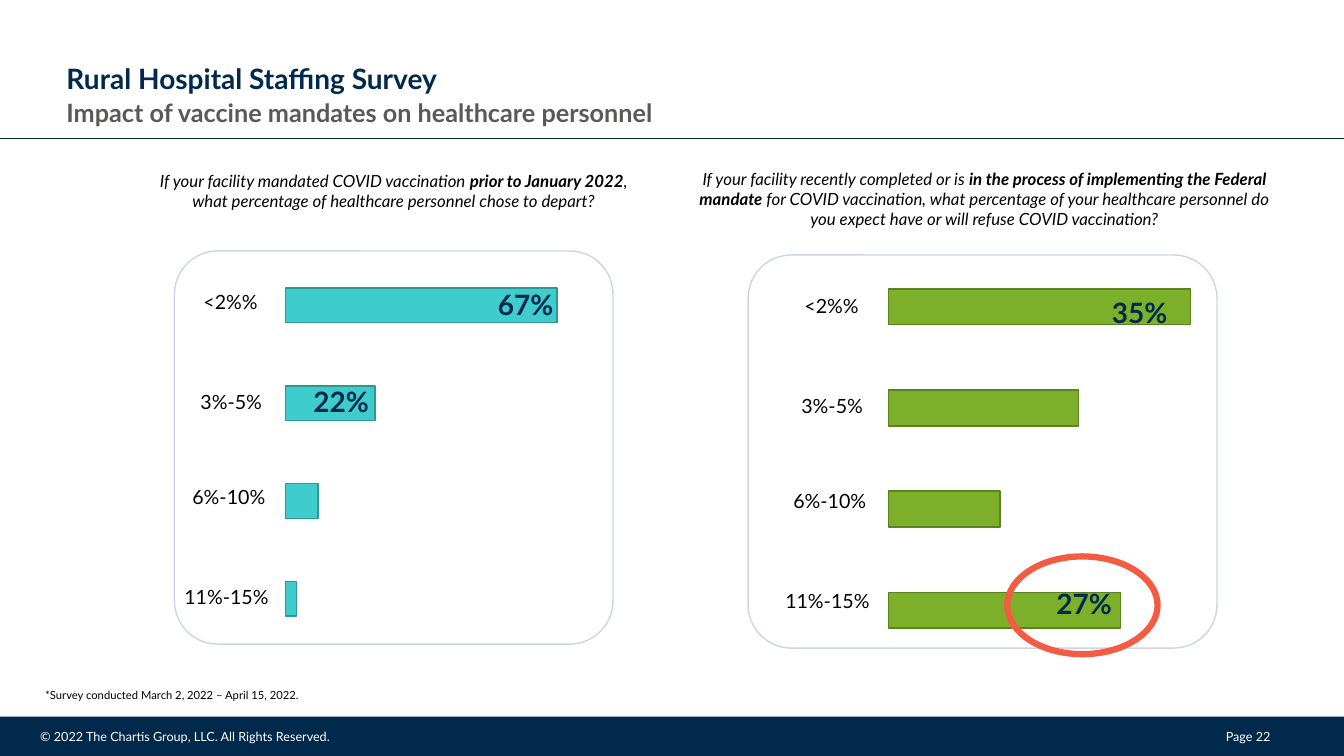
from lxml import etree
from pptx import Presentation
from pptx.chart.data import CategoryChartData
from pptx.dml.color import RGBColor
from pptx.enum.chart import XL_CHART_TYPE as CT
from pptx.enum.shapes import MSO_CONNECTOR as MC, MSO_SHAPE as MS
from pptx.enum.text import MSO_ANCHOR as MA, PP_ALIGN as PA
from pptx.oxml import parse_xml
from pptx.oxml.ns import nsdecls, qn
from pptx.util import Inches, Pt

COLORS = {
    "navy": "00294C", "white": "FFFFFF", "black": "000000", "gray": "5B5857",
    "teal": "3ECCCC", "teal_edge": "2E9797", "green": "7CAF2A",
    "green_edge": "5C811F", "panel": "CED5DF", "coral": "F45B42",
}


def rgb(name):
    return RGBColor.from_string(COLORS[name])


class SlideBuilder:
    font = "Lato"

    def __init__(self, prs):
        self.slide = prs.slides.add_slide(prs.slide_layouts[6])
        self.shapes = self.slide.shapes

    def style(self, r, size, color, bold=False, italic=False):
        f = r.font
        f.name, f.size, f.bold, f.italic = self.font, Pt(size), bold, italic
        f.color.rgb = rgb(color)

    def shape(self, kind, box, fill=None, line=None, width=1, adj=None):
        sp = self.shapes.add_shape(kind, *map(Inches, box))
        sp.shadow.inherit = False
        if adj is not None:
            sp.adjustments[0] = adj
        if fill:
            sp.fill.solid()
            sp.fill.fore_color.rgb = rgb(fill)
        else:
            sp.fill.background()
        if line:
            sp.line.color.rgb = rgb(line)
            sp.line.width = Pt(width)
        else:
            sp.line.fill.background()

    def rule(self, y, width, color):
        ln = self.shapes.add_connector(MC.STRAIGHT, 0, Inches(y), Inches(width), Inches(y))
        ln.line.color.rgb = rgb(color)
        ln.line.width = Pt(0.5)
        etree.SubElement(ln._element.spPr, qn("a:effectLst"))

    def text(self, text, box, size, color, bold=False):
        sp = self.shapes.add_textbox(*map(Inches, box))
        tf = sp.text_frame
        tf.text = text
        tf.word_wrap = True
        for r in tf.paragraphs[0].runs:
            self.style(r, size, color, bold)
        return sp

    def title(self, heading, subheading, box):
        tf = self.text(f"{heading}\v{subheading}", box, 20, "navy", True).text_frame
        tf.vertical_anchor = MA.BOTTOM
        tf.margin_left = tf.margin_right = tf.margin_top = tf.margin_bottom = 0
        p = tf.paragraphs[0]
        p.line_spacing = 1.08
        self.style(p.runs[1], 18, "gray", True)

    def question(self, parts, box):
        sp = self.text("", box, 12, "black")
        sp.fill.solid()
        sp.fill.fore_color.rgb = rgb("white")
        p = sp.text_frame.paragraphs[0]
        p.alignment = PA.CENTER
        for i, part in enumerate(parts):
            r = p.add_run()
            r.text = part
            self.style(r, 12, "black", bold=i == 1, italic=True)

    def bars(self, values, box, color, top_value, layout):
        data = CategoryChartData()
        data.categories = ["1", "2", "3", "4"]
        data.add_series("Series 1", values)
        chart = self.shapes.add_chart(CT.BAR_CLUSTERED, *map(Inches, box), data).chart
        chart.has_legend = chart.has_title = False
        chart.font.name, chart.font.size = self.font, Pt(10)
        chart.font.color.rgb = rgb("black")
        chart.category_axis.visible = chart.value_axis.visible = False
        chart.value_axis.has_major_gridlines = False
        chart.value_axis.minimum_scale = 0
        chart.value_axis.maximum_scale = top_value
        plot = chart.plots[0]
        plot.gap_width = 182
        plot.vary_by_categories = False
        fmt = plot.series[0].format
        fmt.fill.solid()
        fmt.fill.fore_color.rgb = rgb(color)
        fmt.line.color.rgb = rgb(f"{color}_edge")
        fmt.line.width = Pt(1)
        area = chart._chartSpace.chart.plotArea
        for old in area.findall(qn("c:layout")):
            area.remove(old)
        sizes = "".join(f'<c:{k} val="{v}"/>' for k, v in zip("xywh", layout))
        area.insert(0, parse_xml(
            f'<c:layout {nsdecls("c")}><c:manualLayout><c:layoutTarget val="inner"/>'
            f'<c:xMode val="edge"/><c:yMode val="edge"/>{sizes}'
            '</c:manualLayout></c:layout>'))

    def range_labels(self, dx, dy):
        for label, x, y in RANGES:
            self.text(label, (x + dx, y + dy, 1.2, 0.34), 14, "black")

    def percent(self, label, x, y):
        self.text(label, (x, y, 1.11, 0.44), 20, "navy", True)


RANGES = [("<2%%", 1.92, 2.83), ("3%-5%", 1.89, 3.82),
          ("6%-10%", 1.81, 4.76), ("11%-15%", 1.73, 5.75)]


def main():
    prs = Presentation()
    prs.slide_width, prs.slide_height = Inches(13.33), Inches(7.5)
    s = SlideBuilder(prs)

    s.shape(MS.RECTANGLE, (0, 7.11, 13.33, 0.39), fill="navy")
    s.rule(1.37, 13.33, "navy")
    s.text("© 2022 The Chartis Group, LLC. All Rights Reserved.",
           (0.3, 7.18, 4.48, 0.26), 9, "white")
    s.text("Page 22", (12.06, 7.18, 1.05, 0.26), 9, "white")
    s.title("Rural Hospital Staffing Survey",
            "Impact of vaccine mandates on healthcare personnel",
            (0.66, 0.02, 9.34, 1.25))
    s.text("*Survey conducted March 2, 2022 – April 15, 2022.",
           (0.35, 6.78, 3.73, 0.24), 8, "black")

    s.bars([4, 12, 33, 100], (2.69, 2.1, 3.55, 4.46), "teal", 120,
           (0.04, 0.1, 0.91, 0.87))
    s.shape(MS.ROUNDED_RECTANGLE, (1.73, 2.49, 4.35, 3.9), line="panel", adj=0.11)
    s.percent("67%", 4.84, 2.8)
    s.percent("22%", 3.01, 3.77)
    s.range_labels(0, 0)

    s.bars([77, 37, 63, 100], (8.74, 2.46, 3.55, 4.18), "green", 115,
           (0.02, 0.02, 0.97, 0.96))
    s.percent("35%", 10.93, 2.88)
    s.shape(MS.ROUNDED_RECTANGLE, (7.42, 2.53, 4.65, 3.9), line="panel", adj=0.11)
    s.percent("27%", 10.38, 5.77)
    s.range_labels(5.96, 0.04)

    s.question(["If your facility mandated COVID vaccination ",
                "prior to January 2022",
                ", what percentage of healthcare personnel chose to depart?"],
               (1.41, 1.64, 4.99, 0.5))
    s.question(["If your facility recently completed or is ",
                "in the process of implementing the Federal mandate",
                " for COVID vaccination, what percentage of your healthcare personnel"
                " do you expect have or will refuse COVID vaccination?"],
               (6.81, 1.62, 5.91, 0.71))
    s.shape(MS.OVAL, (9.99, 5.52, 1.49, 0.97), line="coral", width=4.5)

    prs.save("out.pptx")


if __name__ == "__main__":
    main()
